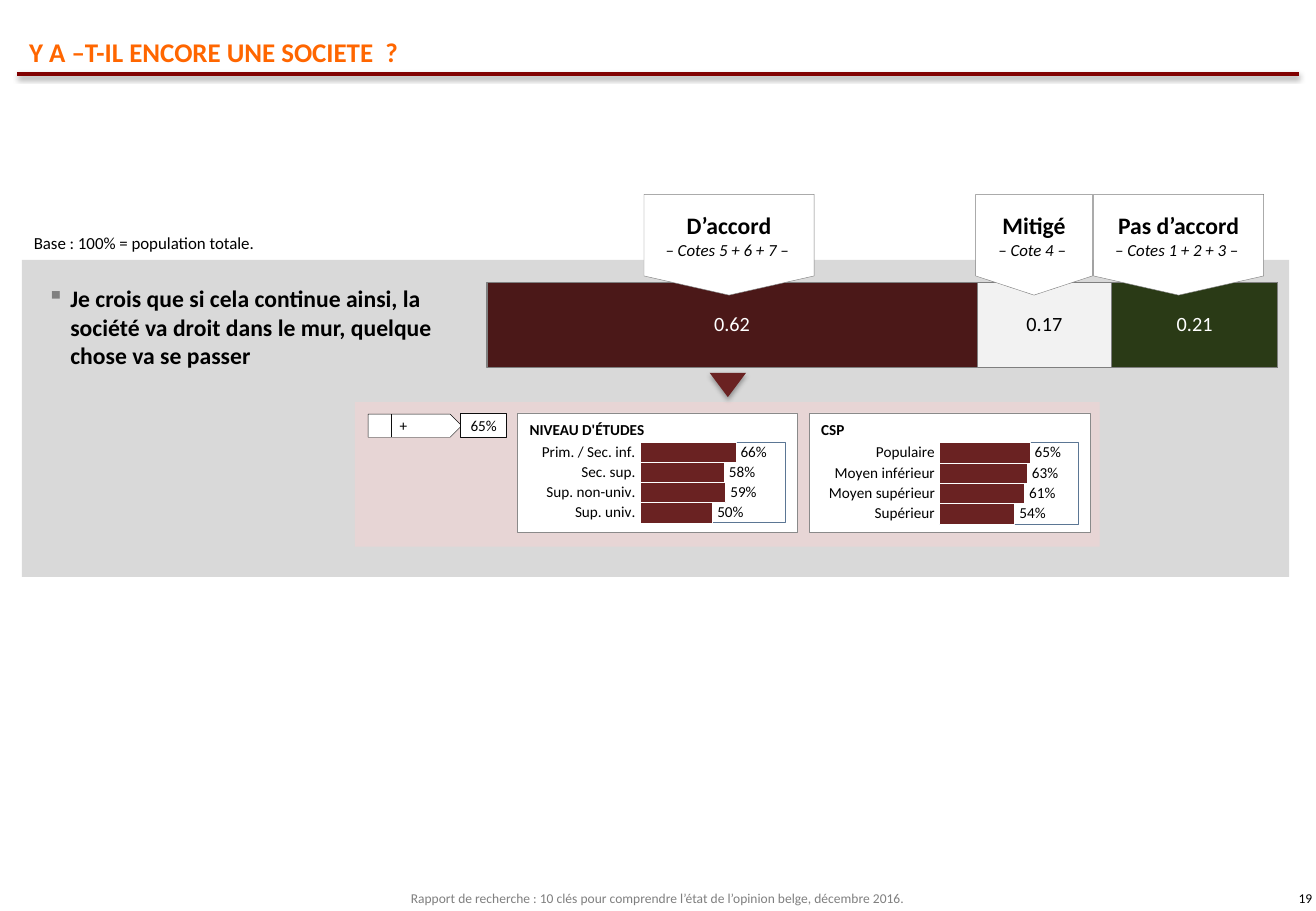
from dataclasses import dataclass

from lxml import etree
from pptx import Presentation
from pptx import util as u
from pptx.chart import data as chart_data
from pptx.dml.color import RGBColor
from pptx.enum import chart as ch, shapes as sh, text as tx
from pptx.oxml import ns, parse_xml

FONT = "Calibri"
BLACK, WHITE = RGBColor(0, 0, 0), RGBColor(255, 255, 255)
ORANGE, MAROON = RGBColor(0xFF, 0x66, 0x00), RGBColor(0x80, 0, 0)
PANEL, PINK = RGBColor(0xD9, 0xD9, 0xD9), RGBColor(0xE7, 0xD5, 0xD5)
AGREE, MIXED = RGBColor(0x4B, 0x18, 0x18), RGBColor(0xF2, 0xF2, 0xF2)
DISAGREE, BAR = RGBColor(0x2A, 0x3A, 0x16), RGBColor(0x6A, 0x22, 0x22)
GREY, CARD_EDGE = RGBColor(0x7F, 0x7F, 0x7F), RGBColor(0x8A, 0x8A, 0x8A)
INK, PLOT_EDGE = RGBColor(0x0D, 0x0D, 0x0D), RGBColor(0x5B, 0x76, 0x94)
CENTER, RIGHT = tx.PP_ALIGN.CENTER, tx.PP_ALIGN.RIGHT
MIDDLE = tx.MSO_ANCHOR.MIDDLE
MARGINS = ("margin_left", "margin_top", "margin_right", "margin_bottom")

Box = tuple[float, float, float, float]


@dataclass
class Segment:
    share: float
    fill: RGBColor
    label: RGBColor


@dataclass
class Flag:
    left: float
    width: float
    heading: str
    scores: str


@dataclass
class Breakdown:
    heading: str
    card: Box
    heading_width: float
    chart: Box
    plot: Box
    values: dict[str, float]


SEGMENTS = [Segment(0.62, AGREE, WHITE), Segment(0.17, MIXED, BLACK), Segment(0.21, DISAGREE, WHITE)]
FLAGS = [
    Flag(9, 1.4, "Pas d’accord", "– Cotes 1 + 2 + 3 – "),
    Flag(8.03, 0.96, "Mitigé", "– Cote 4 – "),
    Flag(5.3, 1.4, "D’accord", "– Cotes 5 + 6 + 7 – "),
]
BREAKDOWNS = [
    Breakdown("NIVEAU D'ÉTUDES", (4.26, 3.4, 2.3, 0.98), 1.16, (3.82, 3.54, 2.84, 0.86),
              (0.51, 0.12, 0.42, 0.77),
              {"Prim. / Sec. inf.": 0.66, "Sec. sup.": 0.58, "Sup. non-univ.": 0.59, "Sup. univ.": 0.5}),
    Breakdown("CSP", (6.66, 3.4, 2.31, 0.98), 0.4, (5.92, 3.54, 3.18, 0.87),
              (0.57, 0.12, 0.36, 0.77),
              {"Populaire": 0.65, "Moyen inférieur": 0.63, "Moyen supérieur": 0.61, "Supérieur": 0.54}),
]


def assign(target, **values) -> None:
    for name, value in values.items():
        setattr(target, name, value)


def set_font(font, size: float, color: RGBColor = BLACK, **style) -> None:
    assign(font, name=FONT, size=u.Pt(size), **style)
    font.color.rgb = color


def set_line(line, color: RGBColor, width: float) -> None:
    line.color.rgb = color
    line.width = u.Pt(width)


def paint(fmt, fill: RGBColor, edge: RGBColor, width: float) -> None:
    fmt.fill.solid()
    fmt.fill.fore_color.rgb = fill
    set_line(fmt.line, edge, width)


def write(p, text: str, size: float, color: RGBColor = BLACK, align=None, **style) -> None:
    p.alignment = align
    r = p.add_run()
    r.text = text
    set_font(r.font, size, color, **style)


def add_box(parent, kind, at: Box, fill: RGBColor, edge: RGBColor | None = None):
    sp = parent.add_shape(kind, *map(u.Inches, at))
    sp.shadow.inherit = False
    sp.fill.solid()
    sp.fill.fore_color.rgb = fill
    if edge is None:
        sp.line.fill.background()
    else:
        set_line(sp.line, edge, 0.25)
    return sp


def add_text(parent, at: Box, text: str, size: float, color: RGBColor = BLACK, align=None,
             wrap: bool = True, bold: bool = False, **frame):
    tf = parent.add_textbox(*map(u.Inches, at)).text_frame
    assign(tf, word_wrap=wrap, auto_size=tx.MSO_AUTO_SIZE.SHAPE_TO_FIT_TEXT, **frame)
    write(tf.paragraphs[0], text, size, color, align, bold=bold)
    return tf


def add_line(parent, start: tuple, end: tuple, color: RGBColor, width: float):
    line = parent.add_connector(sh.MSO_CONNECTOR.STRAIGHT, *map(u.Inches, start + end))
    set_line(line.line, color, width)
    etree.SubElement(line.element.spPr, ns.qn("a:effectLst"))
    return line


def add_shadow(sp, alpha: int, distance: float) -> None:
    effects = sp.element.spPr.find(ns.qn("a:effectLst"))
    effects.append(parse_xml(
        f'<a:outerShdw {ns.nsdecls("a")} blurRad="{u.Pt(3.1)}" dist="{u.Pt(distance)}" dir="5400000" '
        f'rotWithShape="0"><a:srgbClr val="000000"><a:alpha val="{alpha}000"/></a:srgbClr></a:outerShdw>'))


def add_bars(parent, kind, at: Box, plot_at: Box, categories: list, series: list[list], gap: int):
    data = chart_data.CategoryChartData()
    data.categories = categories
    for number, values in enumerate(series, 1):
        data.add_series(f"Series {number}", values)
    chart = parent.add_chart(kind, *map(u.Inches, at), data).chart
    assign(chart, has_legend=False, has_title=False)
    set_font(chart.font, 18)
    assign(chart.value_axis, visible=False, minimum_scale=0, maximum_scale=1, has_major_gridlines=False)
    assign(chart.category_axis, reverse_order=True, major_tick_mark=ch.XL_TICK_MARK.NONE)
    assign(chart.plots[0], gap_width=gap, vary_by_categories=False)
    area = chart.element.find(".//" + ns.qn("c:plotArea"))
    for old in area.findall(ns.qn("c:layout")):
        area.remove(old)
    sizes = "".join(f'<c:{k} val="{v}"/>' for k, v in zip("xywh", plot_at))
    area.insert(0, parse_xml(
        f'<c:layout {ns.nsdecls("c")}><c:manualLayout><c:layoutTarget val="inner"/><c:xMode val="edge"/>'
        f'<c:yMode val="edge"/>{sizes}</c:manualLayout></c:layout>'))
    return chart


def label_values(series, size: float, color: RGBColor, number_format: str, position) -> None:
    labels = series.data_labels
    assign(labels, show_value=True, number_format=number_format,
           number_format_is_linked=False, position=position)
    set_font(labels.font, size, color)


def add_flag(parent, flag: Flag) -> None:
    sp = add_box(parent, sh.MSO_SHAPE.DOWN_ARROW, (flag.left, 1.6, flag.width, 0.83), WHITE, GREY)
    sp.adjustments[0], sp.adjustments[1] = 1, 0.19
    tf = sp.text_frame
    assign(tf, vertical_anchor=MIDDLE, word_wrap=True)
    write(tf.paragraphs[0], flag.heading, 14, align=CENTER, bold=True)
    write(tf.add_paragraph(), flag.scores, 10, align=CENTER, italic=True)


def add_breakdown(parent, item: Breakdown) -> None:
    add_box(parent, sh.MSO_SHAPE.RECTANGLE, item.card, WHITE, CARD_EDGE)
    chart = add_bars(parent, ch.XL_CHART_TYPE.BAR_CLUSTERED, item.chart, item.plot,
                     list(item.values), [list(item.values.values())], 0)
    set_font(chart.category_axis.tick_labels.font, 9)
    set_line(chart.category_axis.format.line, CARD_EDGE, 0.25)
    series = chart.plots[0].series[0]
    paint(series.format, BAR, WHITE, 0.25)
    label_values(series, 9, BLACK, "0%", ch.XL_LABEL_POSITION.OUTSIDE_END)
    area = chart.element.find(".//" + ns.qn("c:plotArea"))
    area.append(parse_xml(
        f'<c:spPr {ns.nsdecls("c", "a")}><a:solidFill><a:srgbClr val="{WHITE}"/></a:solidFill>'
        f'<a:ln w="{u.Pt(0.5)}"><a:solidFill><a:srgbClr val="{PLOT_EDGE}"/></a:solidFill></a:ln></c:spPr>'))
    add_text(parent, (item.card[0], 3.41, item.heading_width, 0.25), item.heading, 9, wrap=False, bold=True)


def main() -> None:
    prs = Presentation()
    assign(prs, slide_width=u.Inches(10.83), slide_height=u.Inches(7.5))
    s = prs.slides.add_slide(prs.slide_layouts[5])
    parts = s.shapes

    # Title and rule
    title = parts.title
    assign(title, left=u.Inches(0.14), top=u.Inches(0.24), width=u.Inches(10.55), height=u.Inches(0.37))
    assign(title.text_frame, vertical_anchor=tx.MSO_ANCHOR.BOTTOM, word_wrap=True,
           auto_size=tx.MSO_AUTO_SIZE.SHAPE_TO_FIT_TEXT)
    write(title.text_frame.paragraphs[0], "Y A –T-IL ENCORE UNE SOCIETE  ?", 16, ORANGE,
          tx.PP_ALIGN.LEFT, bold=True)
    add_shadow(add_line(parts, (0.14, 0.61), (10.69, 0.61), MAROON, 2), 38, 1.6)

    # Panel with the stacked bar
    add_box(parts, sh.MSO_SHAPE.RECTANGLE, (0.18, 2.14, 10.43, 2.61), PANEL)
    stacked = add_bars(parts, ch.XL_CHART_TYPE.BAR_STACKED, (3.84, 1.99, 6.68, 4.11), (0.025, 0, 0.975, 1),
                       ["1", "2", "3"], [[seg.share, None, None] for seg in SEGMENTS], 95)
    stacked.category_axis.visible = False
    stacked.plots[0].overlap = 100
    for series, seg in zip(stacked.plots[0].series, SEGMENTS):
        paint(series.format, seg.fill, GREY, 0.75)
        label_values(series, 12, seg.label, "General", ch.XL_LABEL_POSITION.CENTER)
    add_box(parts, sh.MSO_SHAPE.RECTANGLE, (2.92, 3.31, 6.13, 1.19), PINK)

    # Footer
    footer = dict.fromkeys(MARGINS, u.Inches(0.04)) | {"vertical_anchor": MIDDLE}
    add_text(parts, (0, 7.29, 10.83, 0.21),
             "Rapport de recherche : 10 clés pour comprendre l’état de l’opinion belge, décembre 2016.",
             8, GREY, CENTER, **footer)
    add_text(parts, (8.31, 7.29, 2.53, 0.21), "19", 8, align=RIGHT, **footer)

    # Statement
    tf = add_text(parts, (0.29, 2.29, 3.78, 0.81),
                  "Je crois que si cela continue ainsi, la société va droit dans le mur, quelque chose va se passer",
                  14, bold=True)
    pPr = tf.paragraphs[0]._p.get_or_add_pPr()
    pPr.set("marL", str(u.Inches(0.19)))
    pPr.set("indent", str(u.Inches(-0.19)))
    color = etree.SubElement(pPr, ns.qn("a:buClr"))
    etree.SubElement(color, ns.qn("a:srgbClr"), val="808080")
    etree.SubElement(pPr, ns.qn("a:buChar"), char="▪")

    # Answer flags and pointer
    for flag in FLAGS:
        add_flag(parts, flag)
    pointer = add_box(parts, sh.MSO_SHAPE.ISOSCELES_TRIANGLE, (5.84, 3.07, 0.3, 0.2), BAR)
    pointer.element.spPr.xfrm.set("flipV", "1")
    add_shadow(pointer, 35, 1.8)
    add_text(parts, (0.18, 1.87, 2.07, 0.27), "Base : 100% = population totale.", 10, wrap=False)

    # Breakdown cards
    for item in BREAKDOWNS:
        add_breakdown(parts, item)

    # Tag with the highest group
    tag = parts.add_group_shape().shapes
    name = add_box(tag, sh.MSO_SHAPE.PENTAGON, (3.03, 3.41, 0.77, 0.19), WHITE, INK)
    share = add_box(tag, sh.MSO_SHAPE.RECTANGLE, (3.79, 3.4, 0.38, 0.2), WHITE, INK)
    for sp in (name, share):
        assign(sp.text_frame, vertical_anchor=MIDDLE, word_wrap=sp is share, **dict.fromkeys(MARGINS, 0))
    name.text_frame.paragraphs[0]._p.get_or_add_pPr().set("marL", str(u.Inches(0.26)))
    write(name.text_frame.paragraphs[0], "+", 9, align=tx.PP_ALIGN.LEFT)
    write(share.text_frame.paragraphs[0], "65%", 9, align=CENTER)
    add_line(tag, (3.22, 3.41), (3.22, 3.6), INK, 0.25)

    prs.save("out.pptx")


if __name__ == "__main__":
    main()
